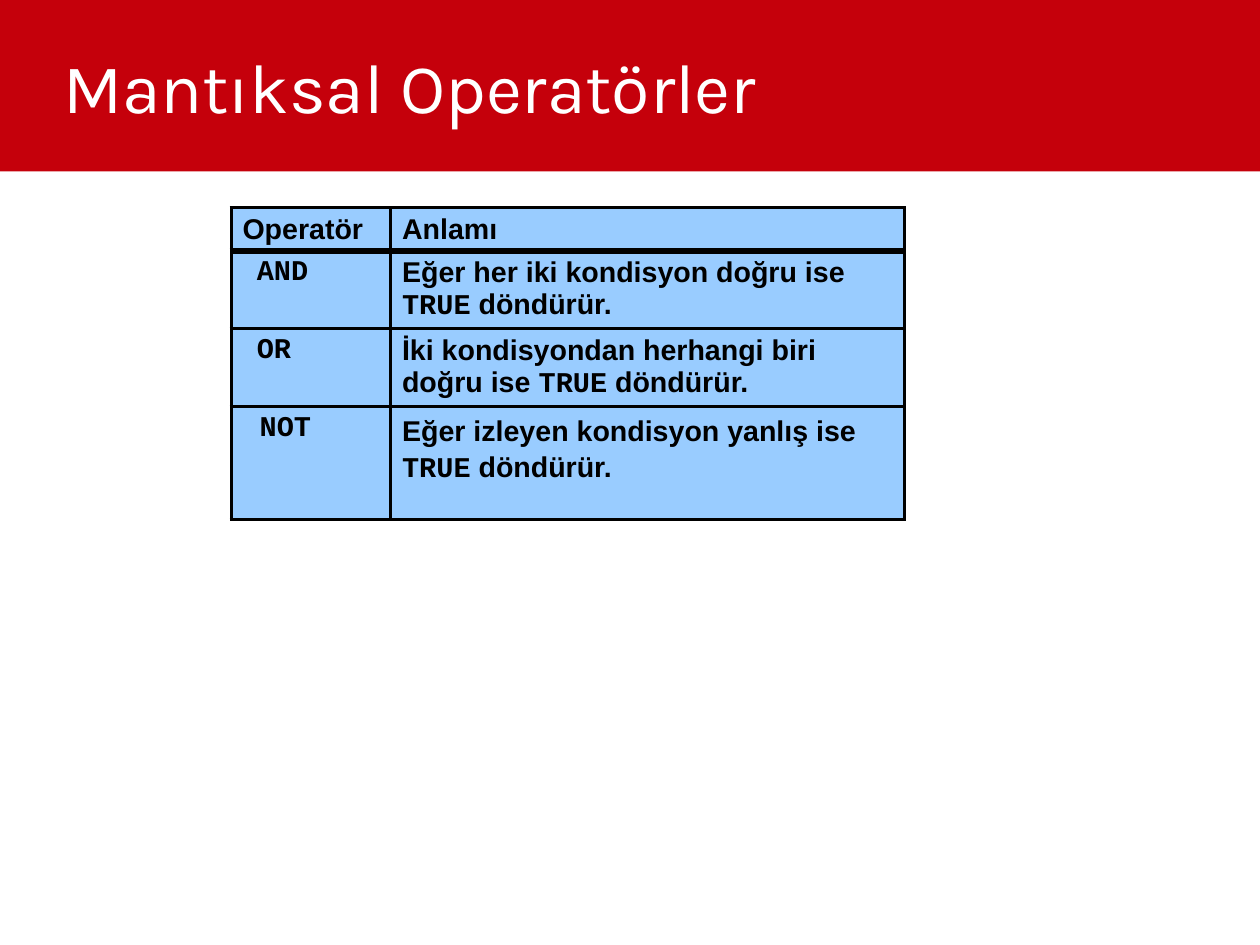
"""Build the slide on logical operators and their meanings."""
from dataclasses import dataclass

from lxml.etree import SubElement
from pptx import Presentation
from pptx.dml.color import RGBColor
from pptx.enum.shapes import MSO_SHAPE as Preset
from pptx.enum.text import MSO_ANCHOR as Anchor
from pptx.oxml.ns import qn
from pptx.util import Pt

RED = RGBColor(0xC5, 0x00, 0x0B)
BLUE = RGBColor(0x99, 0xCC, 0xFF)
BLACK = RGBColor(0x00, 0x00, 0x00)
WHITE = RGBColor(0xFF, 0xFF, 0xFF)
SANS, MONO = "Arial", "Courier New"
WIDTH, HEIGHT, BAND_HEIGHT = Pt(793.7), Pt(595.28), Pt(108)
COLUMN_WIDTHS = (100.5, 323.5)
THIN, THICK = Pt(2.25), Pt(4.5)


@dataclass(frozen=True)
class Span:
    text: str
    font: str = SANS


@dataclass(frozen=True)
class OperatorRow:
    height: float
    name: Span
    meaning: tuple[Span, ...]
    indent: float = 0
    line_spacing: float = 1.0


def returns_true(condition: str) -> tuple[Span, ...]:
    return Span(condition), Span("TRUE", MONO), Span(" döndürür.")


ROWS = (
    OperatorRow(27.1, Span("Operatör"), (Span("Anlamı"),)),
    OperatorRow(49.1, Span("AND", MONO), returns_true("Eğer her iki kondisyon doğru ise "), 9),
    OperatorRow(49.1, Span("OR", MONO), returns_true("İki kondisyondan herhangi biri doğru ise "), 9),
    OperatorRow(71.2, Span(" NOT", MONO), returns_true("Eğer izleyen kondisyon yanlış ise "), 0, 1.1),
)


def apply(target, values: dict) -> None:
    for name, value in values.items():
        setattr(target, name, value)


def write(para, spans: tuple[Span, ...], size: float, color: RGBColor, bold: bool) -> None:
    for span in spans:
        run = para.add_run()
        run.text = span.text
        apply(run.font, {"name": span.font, "size": Pt(size), "bold": bold})
        run.font.color.rgb = color


def paint(shape, color: RGBColor) -> None:
    shape.fill.solid()
    shape.fill.fore_color.rgb = color


def add_borders(cell, top: int, bottom: int) -> None:
    properties = cell._tc.get_or_add_tcPr()
    for side, width in {"L": THIN, "R": THIN, "T": top, "B": bottom}.items():
        line = SubElement(properties, qn(f"a:ln{side}"), w=str(int(width)))
        fill = SubElement(line, qn("a:solidFill"))
        SubElement(fill, qn("a:srgbClr"), val=str(BLACK))


def add_title(page) -> None:
    band = page.shapes.add_shape(Preset.RECTANGLE, 0, 0, WIDTH, BAND_HEIGHT)
    band.shadow.inherit = False
    band.line.fill.background()
    paint(band, RED)
    box = page.shapes.add_textbox(Pt(39.7), Pt(4.3), Pt(754), Pt(99.4))
    apply(box.text_frame, {
        "word_wrap": True, "vertical_anchor": Anchor.MIDDLE,
        "margin_left": 0, "margin_right": 0, "margin_top": 0, "margin_bottom": 0,
    })
    write(box.text_frame.paragraphs[0], (Span("Mantıksal Operatörler", "Karla"),), 44, WHITE, False)


def add_operators(page) -> None:
    table = page.shapes.add_table(
        len(ROWS), len(COLUMN_WIDTHS), Pt(145.6), Pt(131),
        Pt(sum(COLUMN_WIDTHS)), Pt(sum(row.height for row in ROWS)),
    ).table
    apply(table, {"first_row": False, "horz_banding": False})
    for column, width in zip(table.columns, COLUMN_WIDTHS):
        column.width = Pt(width)
    for index, row in enumerate(ROWS):
        table.rows[index].height = Pt(row.height)
        table.cell(index, 0).margin_left = Pt(7.2 + row.indent)
        table.cell(index, 1).text_frame.paragraphs[0].line_spacing = row.line_spacing
        for column, spans in enumerate(((row.name,), row.meaning)):
            cell = table.cell(index, column)
            cell.margin_bottom = Pt(1.5)
            add_borders(cell, THICK if index == 1 else THIN, THICK if index == 0 else THIN)
            paint(cell, BLUE)
            write(cell.text_frame.paragraphs[0], spans, 18, BLACK, True)


def main() -> None:
    deck = Presentation()
    apply(deck, {"slide_width": WIDTH, "slide_height": HEIGHT})
    page = deck.slides.add_slide(deck.slide_layouts[6])
    add_title(page)
    add_operators(page)
    deck.save("out.pptx")


if __name__ == "__main__":
    main()
